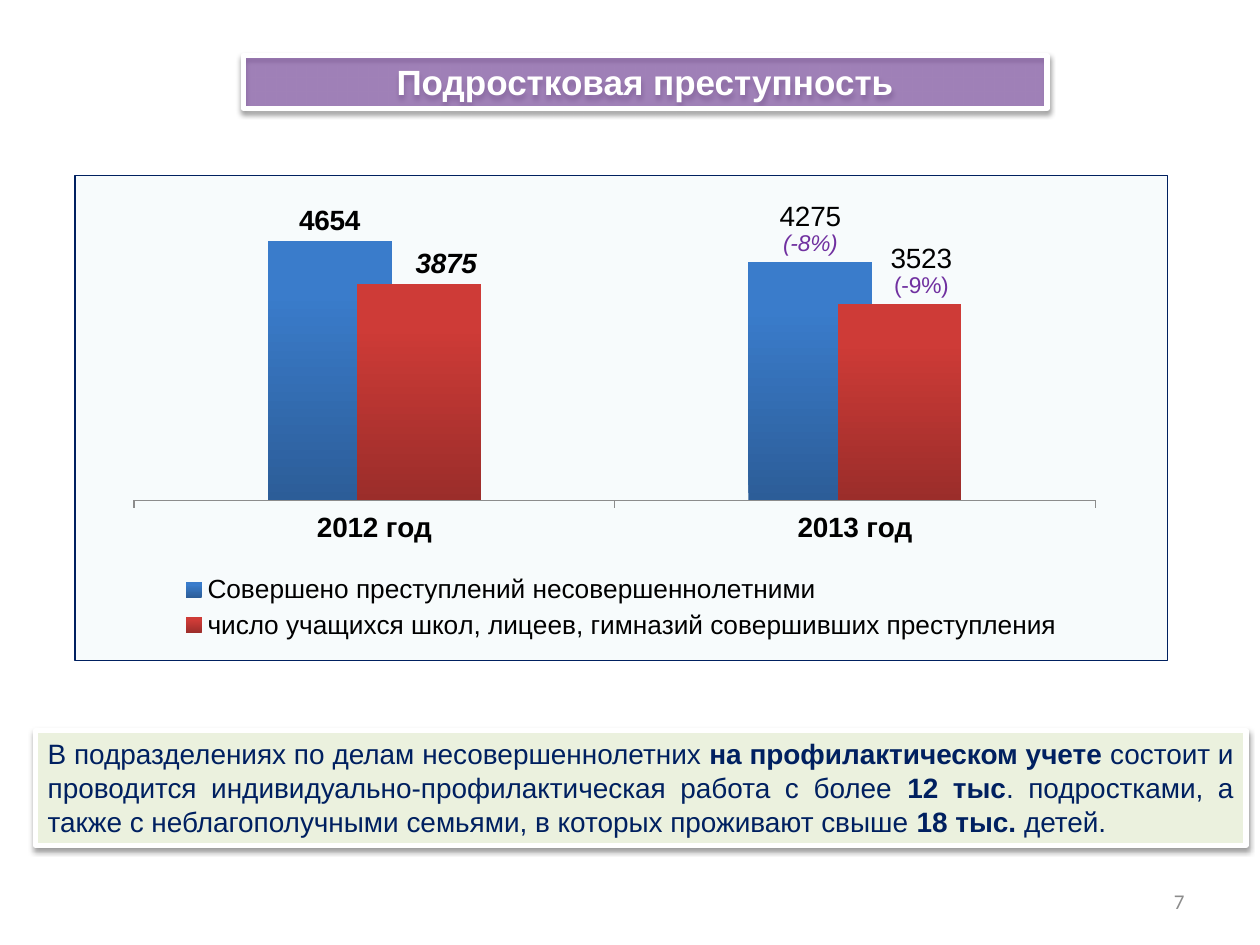
from lxml import etree
from pptx import Presentation
from pptx.chart.data import CategoryChartData
from pptx.dml.color import RGBColor
from pptx.enum.chart import XL_CHART_TYPE, XL_LABEL_POSITION, XL_LEGEND_POSITION, XL_TICK_LABEL_POSITION, XL_TICK_MARK
from pptx.enum.shapes import MSO_SHAPE
from pptx.enum.text import MSO_ANCHOR, PP_ALIGN
from pptx.oxml import parse_xml
from pptx.oxml.ns import nsdecls, qn
from pptx.util import Inches, Pt

WHITE = RGBColor(0xFF, 0xFF, 0xFF)
BLACK = RGBColor(0x00, 0x00, 0x00)
NAVY = RGBColor(0x00, 0x20, 0x60)
PURPLE = RGBColor(0x70, 0x30, 0xA0)
PALE_GREEN = RGBColor(0xEB, 0xF1, 0xDE)
PALE_BLUE = RGBColor(0xDB, 0xEE, 0xF4)
GREY = RGBColor(0x8C, 0x8C, 0x8C)
BLUE_DARK, BLUE_LIGHT = RGBColor(0x2C, 0x5D, 0x98), RGBColor(0x3A, 0x7C, 0xCB)
RED_DARK, RED_LIGHT = RGBColor(0x9B, 0x2D, 0x2A), RGBColor(0xCE, 0x3B, 0x37)


def style_panel(shape, color):
    """Give a panel its fill, thick white outline and soft drop shadow."""
    shape.fill.solid()
    shape.fill.fore_color.rgb = color
    shape.line.color.rgb = WHITE
    shape.line.width = Pt(3)
    shape.shadow.inherit = False
    shape._element.spPr.find(qn("a:effectLst")).append(parse_xml(
        f'<a:outerShdw {nsdecls("a")} blurRad="{Pt(3.1)}" dist="{Pt(1.6)}" dir="5400000" rotWithShape="0">'
        '<a:srgbClr val="000000"><a:alpha val="38000"/></a:srgbClr></a:outerShdw>'))


def manual_layout(**values):
    """Return a chart layout element; keywords are its children in schema order."""
    children = "".join(f'<c:{name} val="{value}"/>' for name, value in values.items())
    return parse_xml(f'<c:layout {nsdecls("c")}><c:manualLayout>{children}</c:manualLayout></c:layout>')


presentation = Presentation()
presentation.slide_width, presentation.slide_height = Inches(10), Inches(7.5)
slide = presentation.slides.add_slide(presentation.slide_layouts[5])

# Title
title = slide.shapes.title
title.left, title.top, title.width, title.height = Inches(1.93), Inches(0.44), Inches(6.38), Inches(0.42)
title._element.spPr.append(parse_xml(
    f'<a:prstGeom {nsdecls("a")} prst="roundRect"><a:avLst/></a:prstGeom>'))
style_panel(title, PURPLE)
etree.SubElement(title._element.spPr.find(".//" + qn("a:srgbClr")), qn("a:alpha"), val="49000")
title.text_frame.text = "Подростковая преступность"
title.text_frame.vertical_anchor = MSO_ANCHOR.MIDDLE
title.text_frame.word_wrap = False
paragraph = title.text_frame.paragraphs[0]
paragraph.alignment = PP_ALIGN.CENTER
paragraph.font.name, paragraph.font.size, paragraph.font.bold = "Arial", Pt(20), True
paragraph.font.color.rgb = WHITE

# Chart
chart_data = CategoryChartData()
chart_data.categories = ["2012 год", "2013 год"]
chart_data.add_series("Совершено преступлений несовершеннолетними", (4654, 4275))
chart_data.add_series("число учащихся школ, лицеев, гимназий совершивших преступления", (3875, 3523))
chart = slide.shapes.add_chart(
    XL_CHART_TYPE.COLUMN_CLUSTERED, Inches(0.59), Inches(1.39), Inches(8.68), Inches(3.86), chart_data).chart
chart.has_title = False
chart.font.name, chart.font.size = "Arial", Pt(16)
chart.font.color.rgb = BLACK
chart._chartSpace.find(qn("c:chart")).addnext(parse_xml(
    f'<c:spPr {nsdecls("c", "a")}>'
    f'<a:solidFill><a:srgbClr val="{PALE_BLUE}"><a:alpha val="20000"/></a:srgbClr></a:solidFill>'
    f'<a:ln w="{Pt(0.75)}"><a:solidFill><a:srgbClr val="{NAVY}"/></a:solidFill></a:ln></c:spPr>'))

plot_area = chart._chartSpace.find(".//" + qn("c:plotArea"))
for layout in plot_area.findall(qn("c:layout")):
    plot_area.remove(layout)
plot_area.insert(0, manual_layout(
    layoutTarget="inner", xMode="edge", yMode="edge", x=0.054, y=0.094, w=0.88, h=0.575))

chart.value_axis.minimum_scale, chart.value_axis.maximum_scale = 0, 5000
chart.value_axis.has_major_gridlines = False
chart.value_axis.visible = False
category_axis = chart.category_axis
category_axis.major_tick_mark = XL_TICK_MARK.OUTSIDE
category_axis.tick_label_position = XL_TICK_LABEL_POSITION.LOW
category_axis.tick_labels.font.bold = True
category_axis.tick_labels.font.size = Pt(16)
category_axis.format.line.color.rgb = GREY

chart.has_legend = True
legend = chart.legend
legend.position = XL_LEGEND_POSITION.BOTTOM
legend.include_in_layout = False
legend.font.size = Pt(15)
legend._element.find(qn("c:legendPos")).addnext(manual_layout(
    xMode="edge", yMode="edge", x=0.09, y=0.81, w=0.82, h=0.16))

plot = chart.plots[0]
plot.gap_width, plot.overlap = 216, 28
plot.vary_by_categories = False
series_styles = [
    (BLUE_DARK, BLUE_LIGHT, "4275", "(-8%)", True),
    (RED_DARK, RED_LIGHT, "3523", "(-9%)", False),
]
for series, (dark, light, value, change, italic) in zip(plot.series, series_styles):
    fill = series.format.fill
    fill.gradient()
    fill.gradient_angle = 90
    for stop, color, position in zip(fill.gradient_stops, (dark, light), (0, 0.8)):
        stop.color.rgb = color
        stop.position = position
    labels = series.data_labels
    labels.show_value = True
    labels.position = XL_LABEL_POSITION.OUTSIDE_END
    labels.font.bold, labels.font.size = True, Pt(16)

    label = series.points[1].data_label
    label.text_frame.text = f"{value}\n{change}"
    value_font, change_font = (paragraph.runs[0].font for paragraph in label.text_frame.paragraphs)
    value_font.size, value_font.bold = Pt(16), False
    change_font.size, change_font.bold, change_font.italic = Pt(13), False, italic
    change_font.color.rgb = PURPLE
    label.position = XL_LABEL_POSITION.OUTSIDE_END

# The red columns' labels stand a little to the right, clear of the blue ones
red_series = plot.series[1]
red_label = red_series.points[0].data_label
red_label.font.size, red_label.font.bold, red_label.font.italic = Pt(16), True, True
red_label.position = XL_LABEL_POSITION.OUTSIDE_END
for label_element, shift in zip(red_series._element.iter(qn("c:dLbl")), (0.025, 0.02)):
    label_element.find(qn("c:idx")).addnext(manual_layout(x=shift, y=0))

# Slide number
number_box = slide.shapes.add_textbox(Inches(7.17), Inches(6.95), Inches(2.33), Inches(0.4))
number_box.text_frame.word_wrap = True
number_box.text_frame.vertical_anchor = MSO_ANCHOR.MIDDLE
paragraph = number_box.text_frame.paragraphs[0]
paragraph.text = "7"
paragraph.alignment = PP_ALIGN.RIGHT
paragraph.font.name, paragraph.font.size = "Calibri", Pt(12)
paragraph.font.color.rgb = GREY

# Note
note = slide.shapes.add_shape(MSO_SHAPE.RECTANGLE, Inches(0.28), Inches(5.8), Inches(9.61), Inches(0.91))
style_panel(note, PALE_GREEN)
note.text_frame.word_wrap = True
note.text_frame.vertical_anchor = MSO_ANCHOR.TOP
paragraph = note.text_frame.paragraphs[0]
paragraph.alignment = PP_ALIGN.JUSTIFY
paragraph.font.name, paragraph.font.size = "Arial", Pt(16)
paragraph.font.color.rgb = NAVY
note_runs = [
    ("В подразделениях по делам несовершеннолетних ", False),
    ("на профилактическом учете ", True),
    ("состоит и проводится индивидуально-профилактическая работа с более ", False),
    ("12 тыс", True),
    (". подростками, а также с неблагополучными семьями, в которых проживают свыше ", False),
    ("18 тыс. ", True),
    ("детей.", False),
]
for text, bold in note_runs:
    run = paragraph.add_run()
    run.text = text
    run.font.bold = bold

presentation.save("out.pptx")
